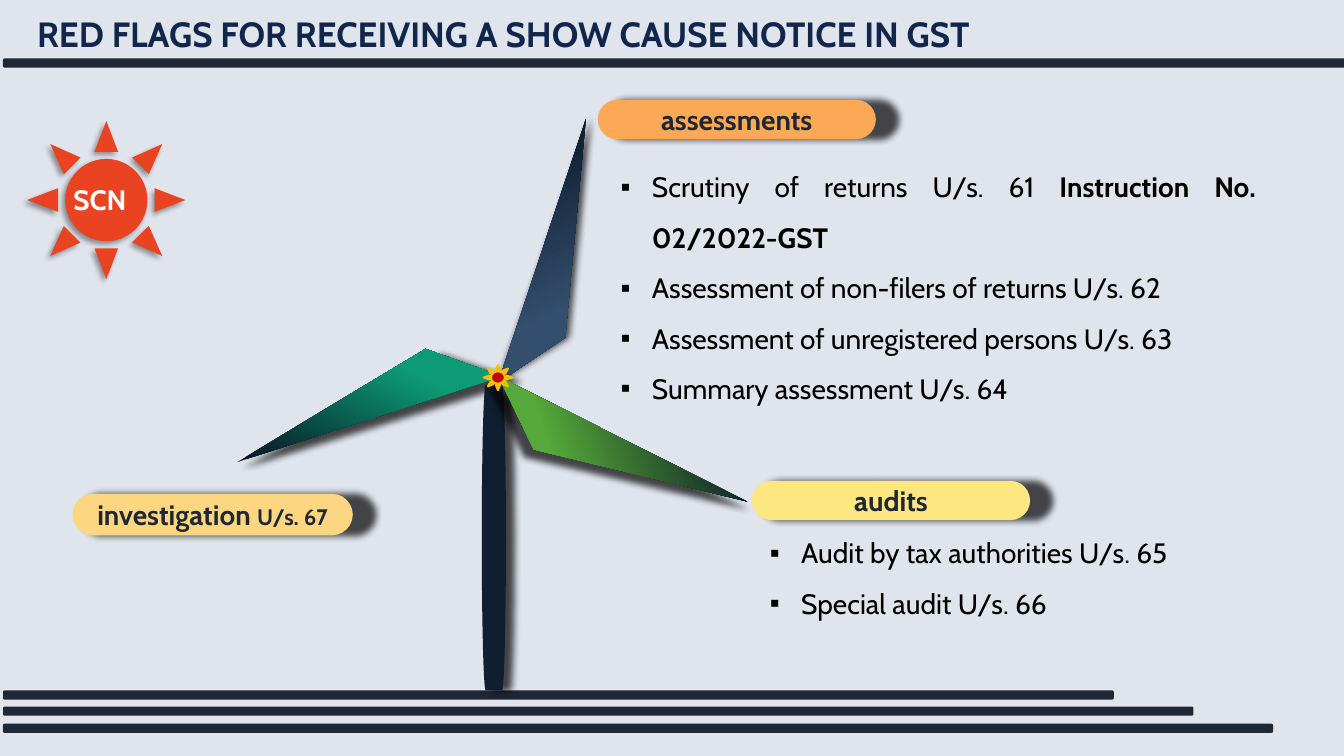
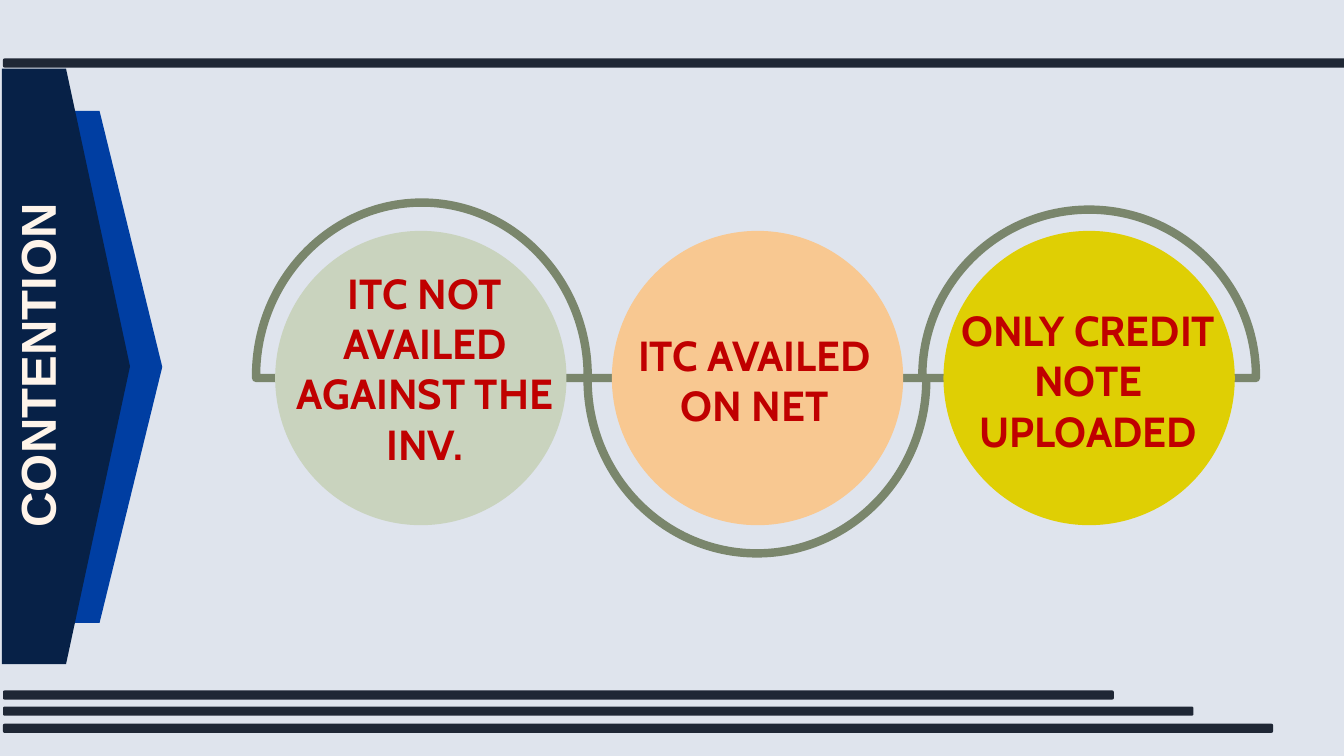
from dataclasses import dataclass

from lxml import etree
from pptx import Presentation
from pptx.dml.color import RGBColor
from pptx.enum.shapes import MSO_SHAPE as Shape
from pptx.enum.text import MSO_ANCHOR as Anchor, MSO_AUTO_SIZE as AutoSize, PP_ALIGN as Align
from pptx.oxml.ns import qn
from pptx.util import Emu, Pt

PX = 9144  # one px is a hundredth of an inch
ARC = 0.55  # handle length of a quarter ellipse, as a share of its radius


@dataclass(frozen=True)
class Theme:
    background: str = "DFE4ED"
    bar: str = "1F2735"
    title: str = "12254A"
    ink: str = "000000"
    white: str = "FFFFFF"
    cream: str = "FEF4EA"
    red: str = "C00000"
    gold: str = "FFC000"
    sun: str = "EA4322"
    mast: str = "111D30"
    blade_tip: str = "091625"
    blade_blue: str = "344E6D"
    blade_teal: str = "0C9B74"
    blade_green: str = "55A839"
    orange: str = "FBA957"
    yellow: str = "FCE780"
    amber: str = "FCD680"
    navy: str = "072147"
    blue: str = "003EA2"
    ring: str = "7A866C"
    sage: str = "C9D3BE"
    peach: str = "F8C891"
    mustard: str = "DFCF04"
    font: str = "Cabin"
    plain_font: str = "Arial"
    small: int = 16
    body: int = 20
    heading: int = 25
    circle: int = 30
    band: int = 35


THEME = Theme()


def px(value):
    return Emu(round(value * PX))


def rgb(color):
    return RGBColor.from_string(color)


# Shapes
def add_shadow(shape, alpha=70, blur=5, distance=5, direction=0, stretch=105):
    effects = shape.element.spPr.find(qn("a:effectLst"))
    shadow = etree.SubElement(effects, qn("a:outerShdw"), blurRad=str(Pt(blur)),
                              dist=str(Pt(distance)), dir=str(direction * 60000),
                              sx=str(stretch * 1000), algn="l", rotWithShape="0")
    color = etree.SubElement(shadow, qn("a:srgbClr"), val=THEME.ink)
    etree.SubElement(color, qn("a:alpha"), val=str(alpha * 1000))


def style_shape(shape, fill=None, line=None, line_width=1.5, shadow=None):
    shape.shadow.inherit = False
    if fill:
        shape.fill.solid()
        shape.fill.fore_color.rgb = rgb(fill)
    else:
        shape.fill.background()
    if line:
        shape.line.color.rgb = rgb(line)
        shape.line.width = Pt(line_width)
    else:
        shape.line.fill.background()
    if shadow:
        add_shadow(shape, **shadow)


def add_shape(slide, kind, box, adjustment=None, **style):
    shape = slide.shapes.add_shape(kind, *map(px, box))
    if adjustment is not None:
        shape.adjustments[0] = adjustment
    style_shape(shape, **style)
    return shape


def add_blade(slide, box, rotation, color, stop, **shadow):
    blade = add_shape(slide, Shape.ISOSCELES_TRIANGLE, box, 0.77)
    add_shadow(blade, **shadow)
    blade.rotation = rotation
    blade.fill.gradient()
    blade.fill.gradient_angle = 45
    stops = zip(blade.fill.gradient_stops, (THEME.blade_tip, color), (0.05, stop))
    for gradient_stop, stop_color, position in stops:
        gradient_stop.color.rgb = rgb(stop_color)
        gradient_stop.position = position


def bend_segment(segment, handles):
    """Turn a straight outline segment into a curve with the two given handles."""
    segment.tag = qn("a:cubicBezTo")
    for index, (x, y) in enumerate(handles):
        segment.insert(index, etree.Element(qn("a:pt"), x=str(px(x)), y=str(px(y))))


def add_half_ring(slide, left, right, base, peak):
    center = (left + right) / 2
    shoulder = base + (2 if peak > base else -2)
    builder = slide.shapes.build_freeform(px(left), px(base))
    outline = ((right, base), (right, shoulder), (center, peak), (left, shoulder))
    builder.add_line_segments([(px(x), px(y)) for x, y in outline], close=True)
    ring = builder.convert_to_shape()
    style_shape(ring, line=THEME.ring, line_width=6)

    # Handles are measured from the corner of the ring
    width, top = right - left, min(base, peak)
    crown = peak - top
    side = shoulder + ARC * (peak - shoulder) - top
    reach = ARC * width / 2
    segments = list(ring.element.iter(qn("a:lnTo")))
    bend_segment(segments[2], ((width, side), (width / 2 + reach, crown)))
    bend_segment(segments[3], ((width / 2 - reach, crown), (0, side)))


# Text
def add_bullet(paragraph, indent=31):
    properties = paragraph._p.get_or_add_pPr()
    properties.set("marL", str(px(indent)))
    properties.set("indent", str(-px(indent)))
    etree.SubElement(properties, qn("a:buFont"), typeface=THEME.plain_font)
    etree.SubElement(properties, qn("a:buChar"), char="▪")


def write_text(shape, paragraphs, size=THEME.body, color=THEME.ink, font=THEME.font,
               bold=False, align=Align.LEFT, anchor=Anchor.TOP, spacing=None, bullet=False):
    """Each paragraph is a string or a list of (text, font overrides) runs."""
    frame = shape.text_frame
    frame.word_wrap = True
    frame.vertical_anchor = anchor
    for index, runs in enumerate(paragraphs):
        paragraph = frame.add_paragraph() if index else frame.paragraphs[0]
        paragraph.alignment = align
        if spacing:
            paragraph.line_spacing = spacing
        if bullet:
            add_bullet(paragraph)
        for text, changes in [(runs, {})] if isinstance(runs, str) else runs:
            run = paragraph.add_run()
            run.text = text
            run.font.name = font
            run.font.size = Pt(changes.get("size", size))
            run.font.bold = changes.get("bold", bold)
            run.font.color.rgb = rgb(color)


def add_text(slide, box, paragraphs, **text_format):
    text_box = slide.shapes.add_textbox(*map(px, box))
    write_text(text_box, paragraphs, **text_format)
    text_box.text_frame.auto_size = AutoSize.SHAPE_TO_FIT_TEXT
    return text_box


def add_bullets(slide, box, items):
    add_text(slide, box, items, align=Align.JUSTIFY, spacing=1.5, bullet=True)


def add_pill(slide, left, top, runs, fill, line=None):
    pill = add_shape(slide, Shape.ROUNDED_RECTANGLE, (left, top, 276, 39), 0.5,
                     fill=fill, line=line, shadow={"distance": 6})
    write_text(pill, [runs], color=THEME.bar, bold=True, align=Align.CENTER,
               anchor=Anchor.MIDDLE)


# Shared frame
def add_slide(presentation):
    slide = presentation.slides.add_slide(presentation.slide_layouts[6])
    slide.background.fill.solid()
    slide.background.fill.fore_color.rgb = rgb(THEME.background)
    for top, width in ((718, 1260), (58, 1333), (685, 1102), (701, 1181)):
        add_shape(slide, Shape.ROUNDED_RECTANGLE, (3, top, width, 9), fill=THEME.bar)
    return slide


# Slide 1
def build_red_flags(presentation):
    slide = add_slide(presentation)

    # Windmill
    add_blade(slide, (423, 232, 276, 49), 108.4, THEME.blade_blue, 0.65)
    add_blade(slide, (221, 368, 276, 49), 342, THEME.blade_teal, 0.68,
              distance=6, direction=45)
    add_shape(slide, Shape.FLOWCHART_TERMINATOR, (478, 382, 24, 303),
              fill=THEME.mast, shadow={"distance": 5})
    add_blade(slide, (469, 433, 276, 49), 206.7, THEME.blade_green, 0.68,
              distance=6, direction=90)
    add_shape(slide, Shape.SUN, (480, 362, 28, 25), fill=THEME.red, line=THEME.gold)

    # Sun
    add_shape(slide, Shape.SUN, (27, 120, 157, 157), 0.24, fill=THEME.sun,
              shadow={"alpha": 40, "blur": 4, "distance": 3, "direction": 135,
                      "stretch": 100})
    add_text(slide, (63, 176, 85, 44), ["SCN"], color=THEME.white, bold=True)

    # Title and branches
    add_pill(slide, 593, 99, "assessments", THEME.orange)
    add_text(slide, (27, 7, 1266, 52), ["RED FLAGS FOR RECEIVING A SHOW CAUSE NOTICE IN GST"],
             size=THEME.heading, color=THEME.title, bold=True)
    add_pill(slide, 746, 477, "audits", THEME.yellow)
    add_pill(slide, 73, 491, [("investigation ", {}), ("U/s. 67", {"size": THEME.small})],
             THEME.amber, line=THEME.amber)
    add_bullets(slide, (606, 147, 650, 258), [
        [("Scrutiny of returns U/s. 61 ", {}), ("Instruction No. 02/2022-GST", {"bold": True})],
        "Assessment of non-filers of returns U/s. 62",
        "Assessment of unregistered persons U/s. 63",
        "Summary assessment U/s. 64",
    ])
    add_bullets(slide, (754, 510, 502, 106),
                ["Audit by tax authorities U/s. 65", "Special audit U/s. 66"])


# Slide 2
def build_contention(presentation):
    slide = add_slide(presentation)

    # Side band
    add_shape(slide, Shape.PENTAGON, (34, 110, 127, 508), 0.49, fill=THEME.blue)
    add_shape(slide, Shape.PENTAGON, (2, 68, 127, 591), 0.5, fill=THEME.navy)
    label = add_text(slide, (-259, 328, 591, 69), ["CONTENTION"], size=THEME.band,
                     font=THEME.plain_font, color=THEME.cream, bold=True, align=Align.CENTER)
    label.rotation = 270

    # Wave of half rings
    for left, right, peak in ((583, 919, 549), (254, 583, 201), (915, 1246, 208)):
        add_half_ring(slide, left, right, 375, peak)

    # Circles
    circles = (
        (273, THEME.sage, (273, 260, 297, 212), "ITC NOT AVAILED AGAINST THE INV."),
        (607, THEME.peach, (604, 322, 289, 111), "ITC AVAILED ON NET"),
        (936, THEME.mustard, (935, 297, 289, 162), "ONLY CREDIT NOTE UPLOADED"),
    )
    for left, fill, text_area, text in circles:
        add_shape(slide, Shape.OVAL, (left, 229, 289, 292), fill=fill)
        add_text(slide, text_area, [text], size=THEME.circle, color=THEME.red,
                 bold=True, align=Align.CENTER)


def main():
    presentation = Presentation()
    presentation.slide_width, presentation.slide_height = px(1333.33), px(750)
    build_red_flags(presentation)
    build_contention(presentation)
    presentation.save("out.pptx")


if __name__ == "__main__":
    main()
